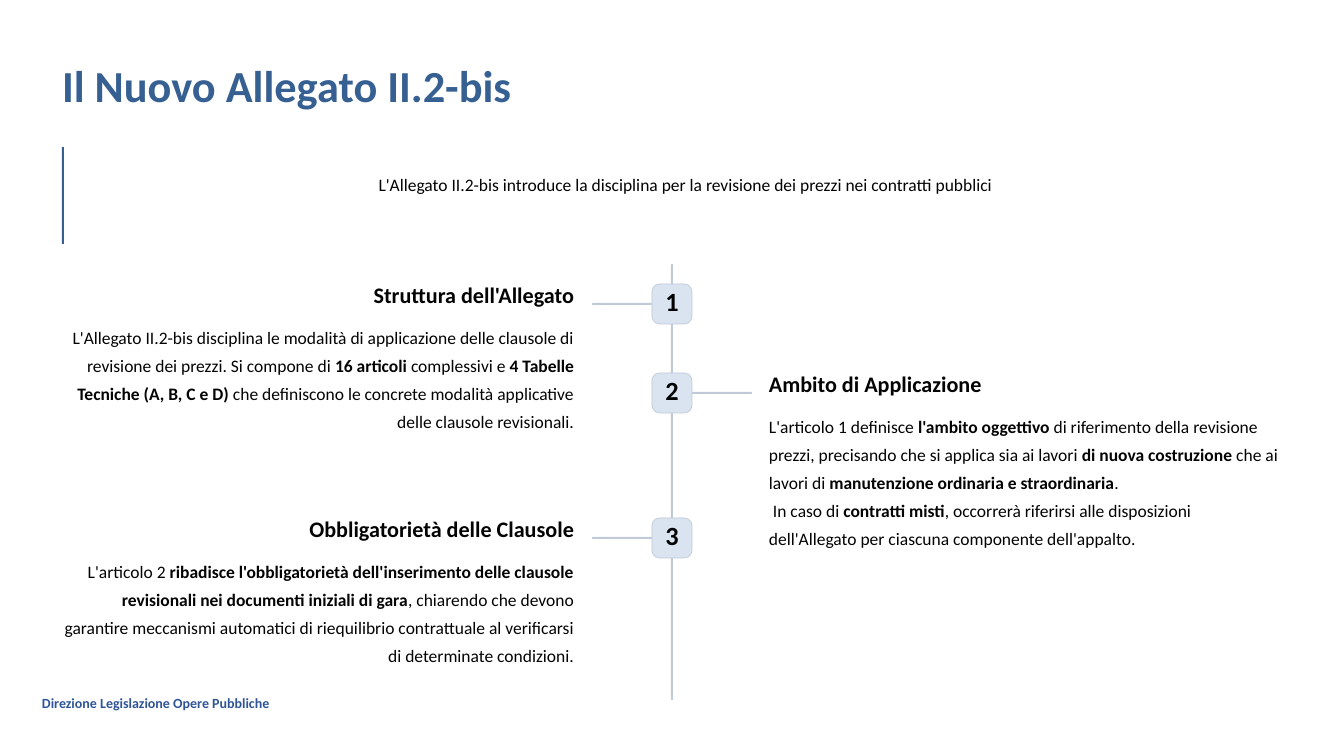
from pptx import Presentation
from pptx.dml.color import RGBColor
from pptx.enum.shapes import MSO_SHAPE as Shape
from pptx.enum.text import MSO_ANCHOR as Anchor, PP_ALIGN as Align
from pptx.util import Emu, Pt

BLUE, INK, GREY, PALE = "376092", "030303", "C0CAD7", "DAE4F1"
COLUMN_WIDTH, LEFT_COLUMN, RIGHT_COLUMN = 512, 62, 769
BADGE_LEFT, BADGE_SIZE = 652, 40


def px(value):
    return Emu(round(value * 914400 / 84))


def color(value):
    return RGBColor.from_string(value)


presentation = Presentation()
presentation.slide_width, presentation.slide_height = px(1344), px(756)
slide = presentation.slides.add_slide(presentation.slide_layouts[6])

steps = [
    (284, "left", "Struttura dell'Allegato", [[
        ("L'Allegato II.2-bis disciplina le modalità di applicazione delle clausole di revisione dei prezzi. Si compone di ", False),
        ("16 articoli ", True),
        ("complessivi e ", False),
        ("4 Tabelle Tecniche (A, B, C e D)", True),
        (" che definiscono le concrete modalità applicative delle clausole revisionali.", False),
    ]]),
    (373, "right", "Ambito di Applicazione", [[
        ("L'articolo 1 definisce ", False),
        ("l'ambito oggettivo ", True),
        ("di riferimento della revisione prezzi, precisando che si applica sia ai lavori ", False),
        ("di nuova costruzione ", True),
        ("che ai lavori di ", False),
        ("manutenzione ordinaria e straordinaria", True),
        (".", False),
    ], [
        ("In caso di ", False),
        ("contratti misti", True),
        (", occorrerà riferirsi alle disposizioni dell'Allegato per ciascuna componente dell'appalto.", False),
    ]]),
    (518, "left", "Obbligatorietà delle Clausole", [[
        ("L'articolo 2 ", False),
        ("ribadisce l'obbligatorietà dell'inserimento delle clausole revisionali nei documenti iniziali di gara", True),
        (", chiarendo che devono garantire meccanismi automatici di riequilibrio contrattuale al verificarsi di determinate condizioni.", False),
    ]]),
]

bars = [(Shape.RECTANGLE, 62, 147, 2, 97, BLUE), (Shape.ROUNDED_RECTANGLE, 671, 264, 2, 436, GREY)]
badges = []
texts = [
    (42, 695, 545, 17, 12, None, "2F5597", Align.LEFT, [[("Direzione Legislazione Opere Pubbliche", True)]]),
    (62, 56, 532, 55, 38, 47.5, BLUE, Align.LEFT, [[("Il Nuovo Allegato II.2-bis", True)]]),
    (89, 167, 1193, 57, 15, 24, INK, Align.CENTER,
     [[("L'Allegato II.2-bis introduce la disciplina per la revisione dei prezzi nei contratti pubblici", False)]]),
]
for top, side, heading, body in steps:
    on_left = side == "left"
    column = LEFT_COLUMN if on_left else RIGHT_COLUMN
    align = Align.RIGHT if on_left else Align.LEFT
    bars.append((Shape.ROUNDED_RECTANGLE, 592 if on_left else 690, top + 19, 62, 2, GREY))
    texts.append((column, top - 3, COLUMN_WIDTH, 28, 19, 23.5, INK, align, [[(heading, True)]]))
    texts.append((column, top + 36, COLUMN_WIDTH, 28 * 5, 15, 24, INK, align, body))

for kind, left, top, width, height, fill in bars:
    bar = slide.shapes.add_shape(kind, px(left), px(top), px(width), px(height))
    bar.shadow.inherit = False
    bar.fill.solid()
    bar.fill.fore_color.rgb = color(fill)
    bar.line.fill.background()
    if kind == Shape.ROUNDED_RECTANGLE:
        bar.adjustments[0] = 0.5

for number, (top, *_) in enumerate(steps, 1):
    badge = slide.shapes.add_shape(
        Shape.ROUNDED_RECTANGLE, px(BADGE_LEFT), px(top), px(BADGE_SIZE), px(BADGE_SIZE))
    badge.adjustments[0] = 0.19
    badge.shadow.inherit = False
    badge.fill.solid()
    badge.fill.fore_color.rgb = color(PALE)
    badge.line.color.rgb = color(GREY)
    badge.line.width = Pt(0.6)
    badges.append((badge, 22.5, 22.5, INK, Align.CENTER, [[(str(number), True)]]))

boxes = [
    (slide.shapes.add_textbox(px(left), px(top), px(width), px(height)), *style)
    for left, top, width, height, *style in texts
]

for shape, size, spacing, ink, align, paragraphs in badges + boxes:
    frame = shape.text_frame
    frame.word_wrap = True
    frame.margin_left = frame.margin_right = frame.margin_top = frame.margin_bottom = 0
    frame.vertical_anchor = Anchor.MIDDLE if align == Align.CENTER and size > 20 else Anchor.TOP
    for index, runs in enumerate(paragraphs):
        paragraph = frame.add_paragraph() if index else frame.paragraphs[0]
        paragraph.alignment = align
        if spacing:
            paragraph.line_spacing = Pt(spacing)
        if index:
            paragraph._p.get_or_add_pPr().set("indent", str(px(4)))
        for text, bold in runs:
            run = paragraph.add_run()
            run.text = text
            run.font.name = "Calibri"
            run.font.size = Pt(size)
            run.font.bold = bold
            run.font.color.rgb = color(ink)

presentation.save("out.pptx")
